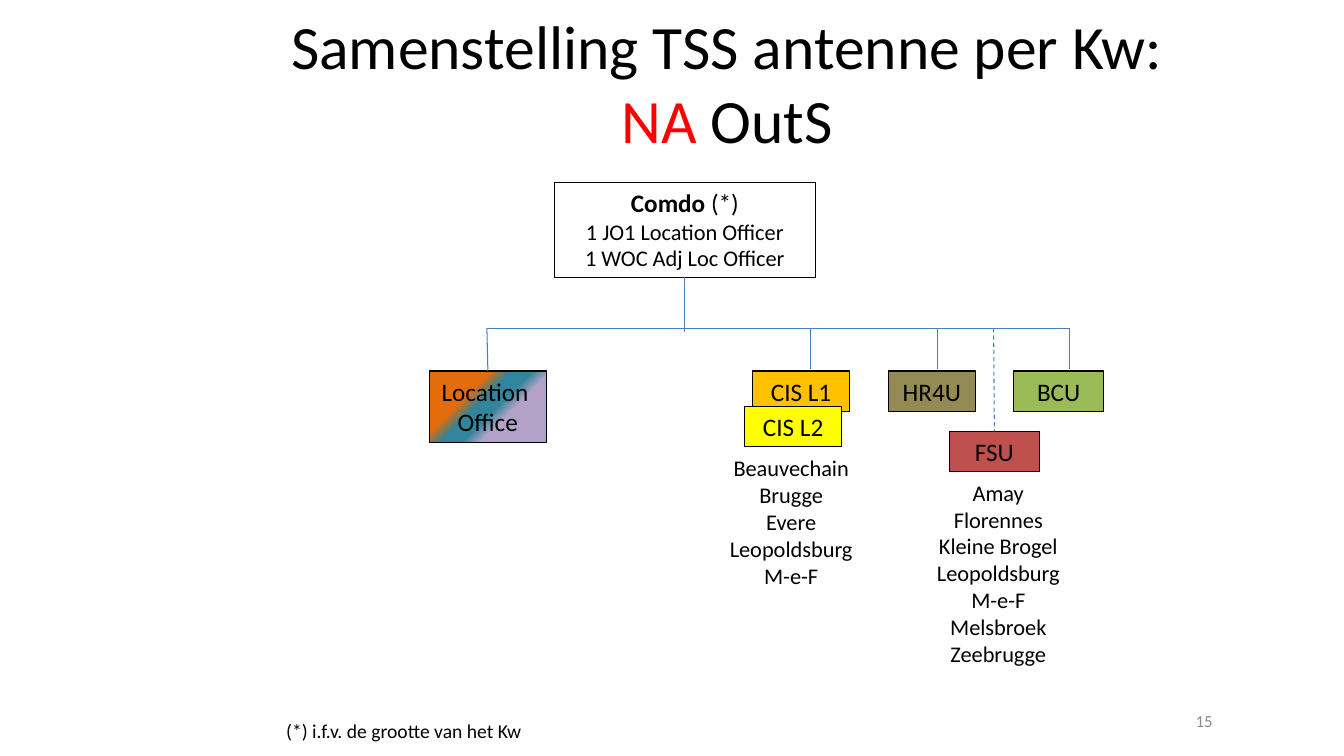
from lxml import etree
from pptx import Presentation
from pptx.dml.color import RGBColor
from pptx.enum.dml import MSO_LINE
from pptx.enum.shapes import MSO_CONNECTOR, MSO_SHAPE
from pptx.enum.text import MSO_ANCHOR, MSO_AUTO_SIZE, PP_ALIGN
from pptx.oxml import parse_xml
from pptx.oxml.ns import nsdecls, qn
from pptx.util import Cm, Pt

RECT, LINE, DASH = MSO_SHAPE.RECTANGLE, MSO_CONNECTOR.STRAIGHT, MSO_LINE.DASH
TOP, MIDDLE = MSO_ANCHOR.TOP, MSO_ANCHOR.MIDDLE
LEFT, CENTER, RIGHT = PP_ALIGN.LEFT, PP_ALIGN.CENTER, PP_ALIGN.RIGHT
GROW, FIXED = MSO_AUTO_SIZE.SHAPE_TO_FIT_TEXT, MSO_AUTO_SIZE.NONE

BLACK = RGBColor(0x00, 0x00, 0x00)
WHITE = RGBColor(0xFF, 0xFF, 0xFF)
RED = RGBColor(0xFF, 0x00, 0x00)
GRAY = RGBColor(0x8C, 0x8C, 0x8C)
BLUE = RGBColor(0x4B, 0x7E, 0xBC)
AMBER = RGBColor(0xFF, 0xC0, 0x00)
YELLOW = RGBColor(0xFF, 0xFF, 0x00)
OLIVE = RGBColor(0x94, 0x8A, 0x54)
GREEN = RGBColor(0x9B, 0xBB, 0x59)
BRICK = RGBColor(0xC0, 0x50, 0x4D)
ORANGE = RGBColor(0xE4, 0x6C, 0x0A)
TEAL = RGBColor(0x31, 0x85, 0x9C)
LILAC = RGBColor(0xB3, 0xA2, 0xC7)
PALE = RGBColor(0xCA, 0xD9, 0xEB)

# Content: each paragraph is a list of runs (text, format changes)
BLEND = [(33, ORANGE), (44, TEAL), (55, TEAL), (65, LILAC), (100, LILAC), (100, PALE)]
SMALL = {"size": Pt(16)}
COMDO = [[("Comdo ", {"bold": True}), ("(*)", {})],
         [("1 JO1 Location Officer", SMALL)],
         [("1 WOC Adj Loc Officer", SMALL)]]
TITLE = [[("Samenstelling TSS antenne per Kw:\v", {}), ("NA ", {"color": RED}), ("OutS", {})]]
CIS_TOWNS = ["Beauvechain", "Brugge", "Evere", "Leopoldsburg", "M-e-F"]
FSU_TOWNS = ["Amay", "Florennes", "Kleine Brogel", "Leopoldsburg", "M-e-F",
             "Melsbroek", "Zeebrugge"]

# Places in cm: left, top, width, height
ROW, UNIT = 9.35, 1.02
BOXES = [
    ("comdo", COMDO, (13.97, 4.6, 6.58, 2.39), WHITE),
    ("office", ["Location ", "Office"], (10.82, ROW, 2.95, 1.8), BLEND),
    ("cis1", ["CIS L1"], (18.97, ROW, 2.44, UNIT), AMBER),
    ("hr", ["HR4U"], (22.38, ROW, 2.21, UNIT), OLIVE),
    ("bcu", ["BCU"], (25.55, ROW, 2.26, UNIT), GREEN),
    ("fsu", ["FSU"], (23.93, 10.87, 2.26, UNIT), BRICK),
    ("cis2", ["CIS L2"], (18.77, 10.24, 2.44, UNIT), YELLOW),
]
# Text, place, size, colour, alignment, anchor, wrap, autosize
NOTES = [
    (TITLE, (7.01, 0.48, 22.63, 3.18), 44, BLACK, CENTER, MIDDLE, True, FIXED),
    (["15"], (24.82, 17.65, 5.99, 1.02), 12, GRAY, RIGHT, MIDDLE, True, FIXED),
    (FSU_TOWNS, (23.24, 11.94, 3.84, 5.05), 16, BLACK, CENTER, TOP, True, GROW),
    (CIS_TOWNS, (18.11, 11.33, 3.66, 3.68), 16, BLACK, CENTER, TOP, False, GROW),
    (["(*) i.f.v. de grootte van het Kw"], (6.96, 17.98, 6.5, 0.86), 14, BLACK,
     LEFT, TOP, False, GROW),
]
BAR, STEM, DROP = 8.27, 8.36, 9.3
WEST, EAST = 12.27, 26.95
# Lines: from, to, joined box at start, joined box at end, dash
LINKS = [
    ((17.26, 6.99), (17.26, STEM), "comdo", None, None),
    ((WEST, BAR), (EAST, BAR), None, None, None),
    ((WEST, BAR), (WEST, ROW), None, "office", None),
    ((20.42, BAR), (20.42, DROP), None, None, None),
    ((23.62, BAR), (23.62, DROP), None, None, None),
    ((EAST, BAR), (EAST, DROP), None, None, None),
    ((25.04, BAR), (25.06, 10.87), None, "fsu", DASH),
]


def write(shape, paras, size, color, align, anchor, wrap, auto):
    frame = shape.text_frame
    frame.word_wrap, frame.auto_size, frame.vertical_anchor = wrap, auto, anchor
    for i, runs in enumerate(paras):
        para = frame.paragraphs[0] if i == 0 else frame.add_paragraph()
        para.alignment = align
        for text, change in [(runs, {})] if isinstance(runs, str) else runs:
            look = {"name": "Calibri", "size": Pt(size), "bold": False, "color": color}
            look.update(change)
            for j, part in enumerate(text.split("\v")):
                if j:
                    para.add_line_break()
                if not part:
                    continue
                run = para.add_run()
                run.text = part
                for key, val in look.items():
                    if key == "color":
                        run.font.color.rgb = val
                    else:
                        setattr(run.font, key, val)


def blend(shape, stops):
    grad = parse_xml(f'<a:gradFill {nsdecls("a")} rotWithShape="1"><a:gsLst/>'
                     '<a:lin ang="2700000" scaled="0"/></a:gradFill>')
    for pos, color in stops:
        stop = etree.SubElement(grad[0], qn("a:gs"), pos=str(pos * 1000))
        etree.SubElement(stop, qn("a:srgbClr"), val=str(color))
    shape._element.spPr.find(qn("a:prstGeom")).addnext(grad)


def main():
    prs = Presentation()
    prs.slide_width, prs.slide_height = Cm(33.87), Cm(19.05)
    shapes = prs.slides.add_slide(prs.slide_layouts[6]).shapes

    # Unit boxes
    units = {}
    for key, paras, place, fill in BOXES:
        box = units[key] = shapes.add_shape(RECT, *map(Cm, place))
        box.shadow.inherit = False
        if isinstance(fill, list):
            blend(box, fill)
        else:
            box.fill.solid()
            box.fill.fore_color.rgb = fill
        box.line.color.rgb, box.line.width = BLACK, Pt(0.75)
        write(box, paras, 18, BLACK, CENTER, TOP, True, GROW)

    # Tree lines
    for start, end, head, tail, dash in LINKS:
        link = shapes.add_connector(LINE, *map(Cm, start + end))
        if head:
            link.begin_connect(units[head], 2)
        if tail:
            link.end_connect(units[tail], 0)
        link.line.color.rgb, link.line.width = BLUE, Pt(0.75)
        if dash:
            link.line.dash_style = dash
        etree.SubElement(link._element.spPr, qn("a:effectLst"))

    # Title, lists and notes
    for paras, place, *style in NOTES:
        write(shapes.add_textbox(*map(Cm, place)), paras, *style)

    prs.save("out.pptx")


if __name__ == "__main__":
    main()
